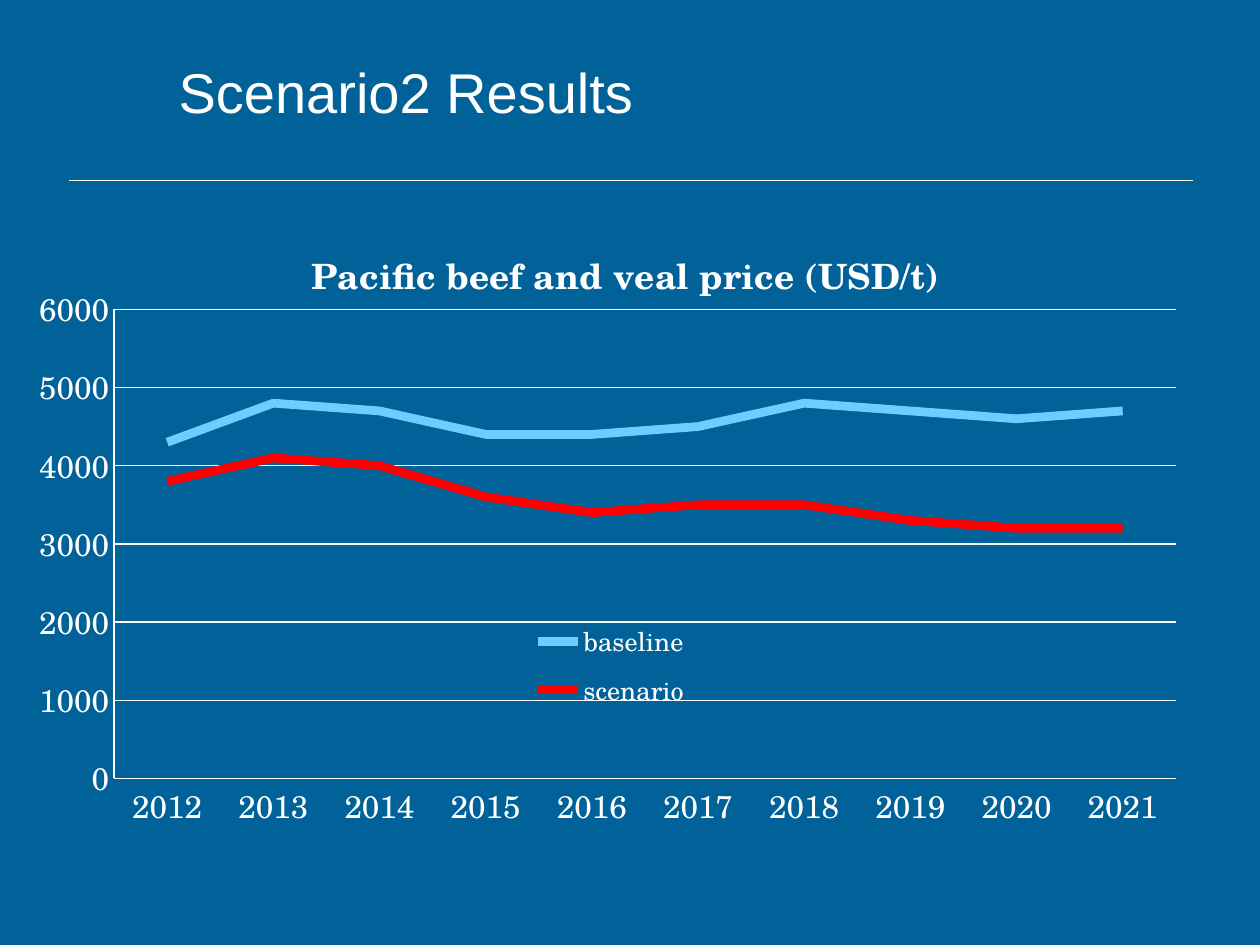
from lxml import etree
from pptx import Presentation
from pptx.chart.data import CategoryChartData
from pptx.dml.color import RGBColor
from pptx.enum import chart as ch, shapes, text
from pptx.oxml.ns import qn
from pptx.util import Pt

COLORS = {"background": "006299", "white": "FFFFFF",
          "baseline": "70CCFF", "scenario": "FF0000"}
SERIF = "TeX Gyre Schola"
TITLE = "Scenario2 Results"
CHART_TITLE = "Pacific beef and veal price (USD/t)"
YEARS = [str(year) for year in range(2012, 2022)]
PRICES = {
    "baseline": [4300, 4800, 4700, 4400, 4400, 4500, 4800, 4700, 4600, 4700],
    "scenario": [3800, 4100, 4000, 3600, 3400, 3500, 3500, 3300, 3200, 3200],
}


def rgb(name):
    return RGBColor.from_string(COLORS[name])


def style_font(font, size, face=SERIF, color="white", bold=False):
    font.size, font.name, font.bold = Pt(size), face, bold
    font.color.rgb = rgb(color)


def add_text(tf, content, **fmt):
    r = tf.paragraphs[0].add_run()
    r.text = content
    style_font(r.font, **fmt)


def style_line(line, color, width):
    line.color.rgb = rgb(color)
    line.width = Pt(width)


def set_layout(parent, index, inner=False, **fractions):
    """Place a chart part by fractions of the chart's width and height."""
    for old in parent.findall(qn("c:layout")):
        parent.remove(old)
    layout = etree.Element(qn("c:layout"))
    parent.insert(index, layout)
    manual = etree.SubElement(layout, qn("c:manualLayout"))
    settings = [("layoutTarget", "inner")] if inner else []
    settings += [("xMode", "edge"), ("yMode", "edge"), *fractions.items()]
    for tag, value in settings:
        etree.SubElement(manual, qn("c:" + tag)).set("val", str(value))


def add_price_chart(s):
    data = CategoryChartData(number_format="0")
    data.categories = YEARS
    for name, values in PRICES.items():
        data.add_series(name, values)
    chart = s.shapes.add_chart(ch.XL_CHART_TYPE.LINE, Pt(22.3), Pt(113.8),
                               Pt(660.2), Pt(360), data).chart
    style_font(chart.font, 15)

    chart.has_title = True
    title = chart.chart_title
    add_text(title.text_frame, CHART_TITLE, size=20, bold=True)
    title.include_in_layout = False
    set_layout(title._element, 1, x=0.23, y=0.06)

    chart.has_legend = True
    legend = chart.legend
    legend.position = ch.XL_LEGEND_POSITION.RIGHT
    legend.include_in_layout = False
    style_font(legend.font, 15)
    set_layout(legend._element, 1, x=0.41, y=0.66, w=0.17, h=0.17)

    for axis in (chart.category_axis, chart.value_axis):
        axis.major_tick_mark = axis.minor_tick_mark = ch.XL_TICK_MARK.NONE
        style_font(axis.tick_labels.font, 18)
        style_line(axis.format.line, "white", 0.75)
    values = chart.value_axis
    values.minimum_scale, values.maximum_scale, values.major_unit = 0, 6000, 1000
    values.has_major_gridlines = True
    style_line(values.major_gridlines.format.line, "white", 0.75)

    plot = chart.plots[0]
    plot.vary_by_categories = False
    for series in plot.series:
        series.smooth = False
        series.marker.style = ch.XL_MARKER_STYLE.NONE
        style_line(series.format.line, series.name, 5)
    set_layout(chart._chartSpace.chart.plotArea, 0, inner=True,
               x=0.065, y=0.176, w=0.919, h=0.749)


def main():
    prs = Presentation()
    prs.slide_width, prs.slide_height = Pt(720), Pt(540)
    s = prs.slides.add_slide(prs.slide_layouts[6])
    s.background.fill.solid()
    s.background.fill.fore_color.rgb = rgb("background")

    rule = s.shapes.add_connector(shapes.MSO_CONNECTOR.STRAIGHT,
                                  Pt(39.6), Pt(103), Pt(681.8), Pt(103))
    style_line(rule.line, "white", 0.5)
    etree.SubElement(rule._element.spPr, qn("a:effectLst"))

    add_price_chart(s)

    tf = s.shapes.add_textbox(Pt(95), Pt(10.1), Pt(625), Pt(84.2)).text_frame
    tf.word_wrap = True
    tf.vertical_anchor = text.MSO_ANCHOR.MIDDLE
    add_text(tf, TITLE, size=32, face="Arial")
    prs.save("out.pptx")


if __name__ == "__main__":
    main()
